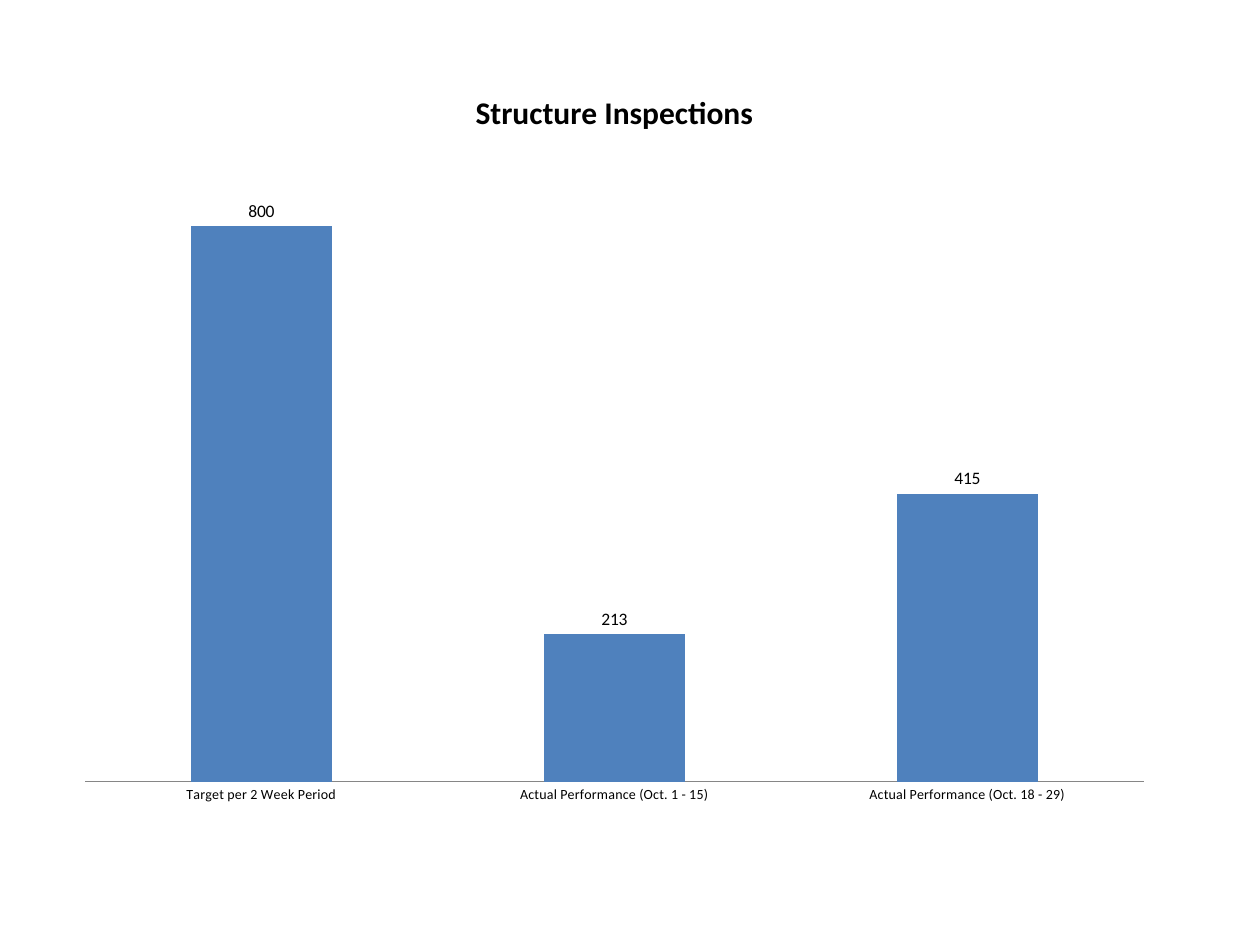
from pptx import Presentation
from pptx.chart.data import CategoryChartData
from pptx.dml.color import RGBColor
from pptx.enum.chart import XL_CHART_TYPE, XL_LABEL_POSITION, XL_TICK_MARK
from pptx.util import Emu, Pt

COLUMNS = XL_CHART_TYPE.COLUMN_CLUSTERED
OUTSIDE_END = XL_LABEL_POSITION.OUTSIDE_END
NO_TICK = XL_TICK_MARK.NONE

# Content
TITLE = "Structure Inspections"
INSPECTIONS = {
    "Target per 2 Week Period": 800,
    "Actual Performance (Oct. 1 - 15)": 213,
    "Actual Performance (Oct. 18 - 29)": 415,
}

# Theme and layout, in px at 126 px to the inch
THEME = {
    "font": "Calibri",
    "text": RGBColor.from_string("000000"),
    "bar": RGBColor.from_string("4F81BD"),
    "axis": RGBColor.from_string("868686"),
    "title_size": Pt(18),
    "label_size": Pt(10),
    "category_size": Pt(8),
}
PX = 914400 // 126
SLIDE_SIZE = (1260, 945)
CHART_BOX = (63, 63, 1103, 756)


def px(length):
    return Emu(length * PX)


def style_font(font, size, bold=False):
    font.color.rgb = THEME["text"]
    values = {"name": THEME["font"], "size": size, "bold": bold}
    for attribute, value in values.items():
        setattr(font, attribute, value)


def add_inspections_chart(slide):
    data = CategoryChartData()
    data.categories = list(INSPECTIONS)
    data.add_series(TITLE, list(INSPECTIONS.values()))
    chart = slide.shapes.add_chart(COLUMNS, *map(px, CHART_BOX), data).chart
    chart.has_legend = False
    style_font(chart.font, THEME["label_size"])

    # Title
    chart.has_title = True
    heading = chart.chart_title.text_frame
    heading.text = TITLE
    style_font(heading.paragraphs[0].runs[0].font, THEME["title_size"], bold=True)
    chart.chart_title.include_in_layout = False

    # Axes
    categories, scale = chart.category_axis, chart.value_axis
    categories.major_tick_mark = NO_TICK
    categories.format.line.color.rgb = THEME["axis"]
    style_font(categories.tick_labels.font, THEME["category_size"])
    scale.has_major_gridlines = False
    scale.visible = False
    scale.minimum_scale, scale.maximum_scale = 0, 900

    # Columns and their values
    plot = chart.plots[0]
    plot.vary_by_categories = False
    plot.gap_width, plot.overlap = 150, -25
    bars = plot.series[0].format
    bars.fill.solid()
    bars.fill.fore_color.rgb = THEME["bar"]
    plot.has_data_labels = True
    labels = plot.data_labels
    labels.show_value = True
    labels.position = OUTSIDE_END
    style_font(labels.font, THEME["label_size"])


def main():
    deck = Presentation()
    deck.slide_width, deck.slide_height = map(px, SLIDE_SIZE)
    add_inspections_chart(deck.slides.add_slide(deck.slide_layouts[6]))
    deck.save("out.pptx")


if __name__ == "__main__":
    main()
